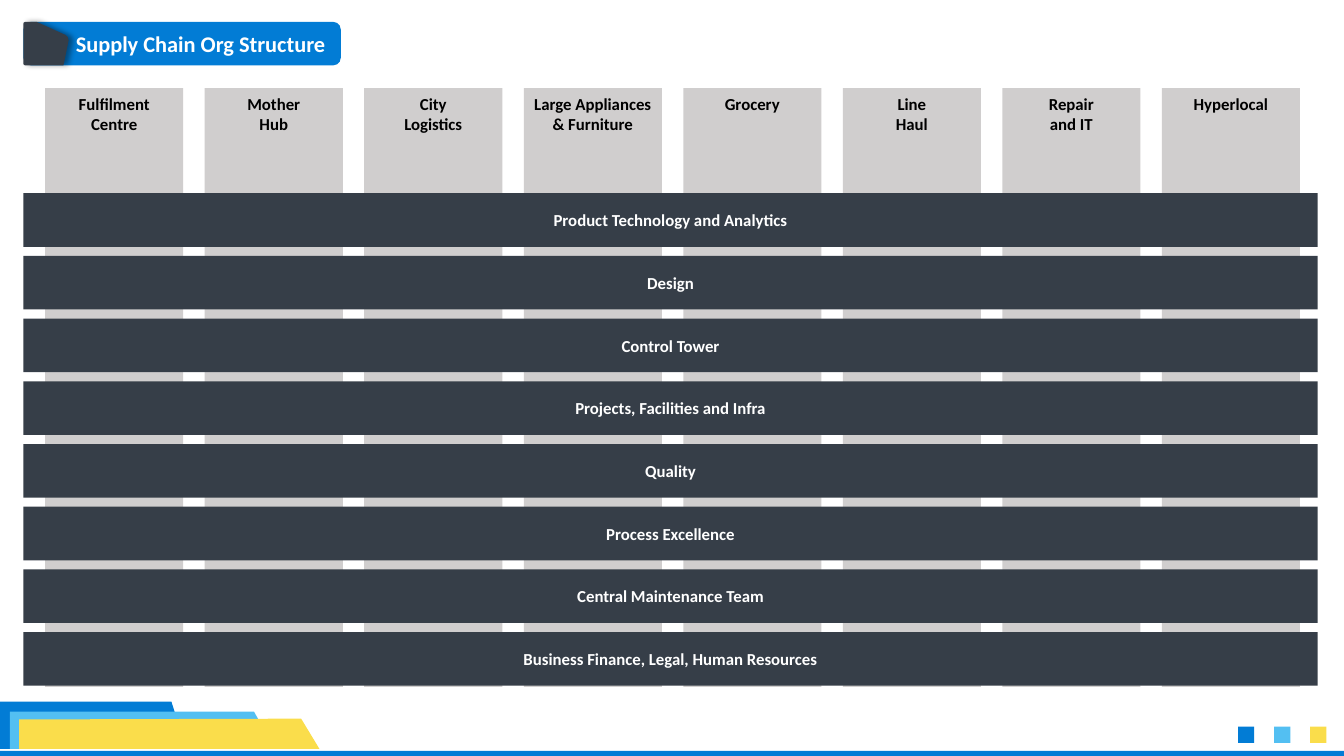
from dataclasses import dataclass

from pptx import Presentation
from pptx.dml.color import RGBColor
from pptx.enum import shapes, text
from pptx.oxml import parse_xml
from pptx.oxml.ns import nsdecls, qn
from pptx.util import Cm, Pt

BLUE, SKY, YELLOW = "027CD5", "53BFF2", "FADD4B"
SLATE, GREY, WHITE, BLACK = "363E48", "D0CECE", "FFFFFF", "000000"
RECT = shapes.MSO_SHAPE.RECTANGLE


@dataclass
class Box:
    left: float
    top: float
    width: float
    height: float
    fill: str


@dataclass
class Outline:
    points: list[tuple[float, float]]
    fill: str


@dataclass
class Division:
    lines: list[str]
    inset: float = 0.25


DIVISIONS = [
    Division(["Fulfilment Centre"]),
    Division(["Mother", "Hub"]),
    Division(["City", "Logistics"]),
    Division(["Large Appliances", "& Furniture"], inset=0.1),
    Division(["Grocery"]),
    Division(["Line", "Haul"]),
    Division(["Repair", "and IT"]),
    Division(["Hyperlocal"], inset=0.2),
]
SHARED_TEAMS = [
    "Product Technology and Analytics",
    "Design",
    "Control Tower",
    "Projects, Facilities and Infra",
    "Quality",
    "Process Excellence",
    "Central Maintenance Team",
    "Business Finance, Legal, Human Resources",
]
FOOTER_BANDS = [
    Outline([(0, 17.68), (4.32, 17.68), (4.7, 18.87), (0, 18.87)], BLUE),
    Outline([(0.25, 17.93), (6.4, 17.93), (6.93, 18.87), (0.25, 18.87)], SKY),
    Outline([(0.48, 18.13), (7.59, 18.11), (8.05, 18.87), (0.48, 18.87)], YELLOW),
]
TITLE_TAB = Outline([
    (0.64, 1.65), (0.6, 1.63), (0.59, 1.6), (0.59, 0.6), (0.6, 0.57), (0.64, 0.55),
    (0.92, 0.55), (1.65, 0.88), (1.71, 0.94), (1.73, 1.02), (1.6, 1.65),
], SLATE)


def paint(shape, fill: str):
    shape.fill.solid()
    shape.fill.fore_color.rgb = RGBColor.from_string(fill)
    shape.line.fill.background()
    shape.shadow.inherit = False
    return shape


def draw_box(slide, box: Box, kind=RECT):
    return paint(slide.shapes.add_shape(
        kind, Cm(box.left), Cm(box.top), Cm(box.width), Cm(box.height)), box.fill)


def draw_outline(slide, outline: Outline):
    corners = [(Cm(x), Cm(y)) for x, y in outline.points]
    builder = slide.shapes.build_freeform(*corners[0])
    builder.add_line_segments(corners[1:], close=True)
    return paint(builder.convert_to_shape(), outline.fill)


def write(shape, lines: list[str], *, size: float = 12, color: str = WHITE,
          align=text.PP_ALIGN.CENTER, anchor=text.MSO_ANCHOR.MIDDLE,
          left: float = 0.25, right: float = 0.25, wrap: bool = True) -> None:
    frame = shape.text_frame
    frame.text = "\n".join(lines)
    frame.auto_size = text.MSO_AUTO_SIZE.NONE
    frame.word_wrap = wrap
    frame.vertical_anchor = anchor
    frame.margin_left, frame.margin_right = Cm(left), Cm(right)
    frame.margin_top = frame.margin_bottom = Cm(0.13)
    for paragraph in frame.paragraphs:
        paragraph.alignment = align
        font = paragraph.font
        font.name, font.size, font.bold = "Calibri", Pt(size), True
        font.color.rgb = RGBColor.from_string(color)


def add_shadow(shape) -> None:
    effects = shape.element.spPr.find(qn("a:effectLst"))
    effects.append(parse_xml(
        f'<a:outerShdw {nsdecls("a")} blurRad="{Pt(4)}" dist="{Pt(3)}" dir="0" rotWithShape="0">'
        f'<a:srgbClr val="{BLACK}"><a:alpha val="40000"/></a:srgbClr></a:outerShdw>'))


def draw_footer(slide) -> None:
    draw_box(slide, Box(0, 18.92, 33.87, 0.13, BLUE))
    for band in FOOTER_BANDS:
        draw_outline(slide, band)
    for i, fill in enumerate([BLUE, SKY, YELLOW]):
        draw_box(slide, Box(31.2 + 0.91 * i, 18.31, 0.41, 0.41, fill))


def draw_title(slide) -> None:
    banner = draw_box(slide, Box(0.59, 0.55, 8, 1.1, BLUE),
                      shapes.MSO_SHAPE.ROUNDED_RECTANGLE)
    banner.adjustments[0] = 0.18
    add_shadow(draw_outline(slide, TITLE_TAB))

    heading = slide.shapes.title
    heading.left, heading.top = banner.left, banner.top
    heading.width, heading.height = banner.width, banner.height
    write(heading, ["Supply Chain Org Structure"], size=16,
          align=text.PP_ALIGN.LEFT, left=1.32, wrap=False)
    # Bring the heading in front of its banner
    heading.element.getparent().append(heading.element)


def draw_structure(slide) -> None:
    # Divisions as upright columns
    for i, division in enumerate(DIVISIONS):
        column = draw_box(slide, Box(1.14 + 4.02 * i, 2.22, 3.48, 15.09, GREY))
        write(column, division.lines, color=BLACK, anchor=text.MSO_ANCHOR.TOP,
              left=division.inset, right=division.inset)
    # Shared teams as bars across all divisions
    for i, team in enumerate(SHARED_TEAMS):
        bar = draw_box(slide, Box(0.59, 4.87 + 1.58 * i, 32.62, 1.35, SLATE))
        write(bar, [team])


def main() -> None:
    deck = Presentation()
    deck.slide_width, deck.slide_height = Cm(33.87), Cm(19.05)
    slide = deck.slides.add_slide(deck.slide_layouts[5])
    draw_footer(slide)
    draw_title(slide)
    draw_structure(slide)
    deck.save("out.pptx")


if __name__ == "__main__":
    main()
